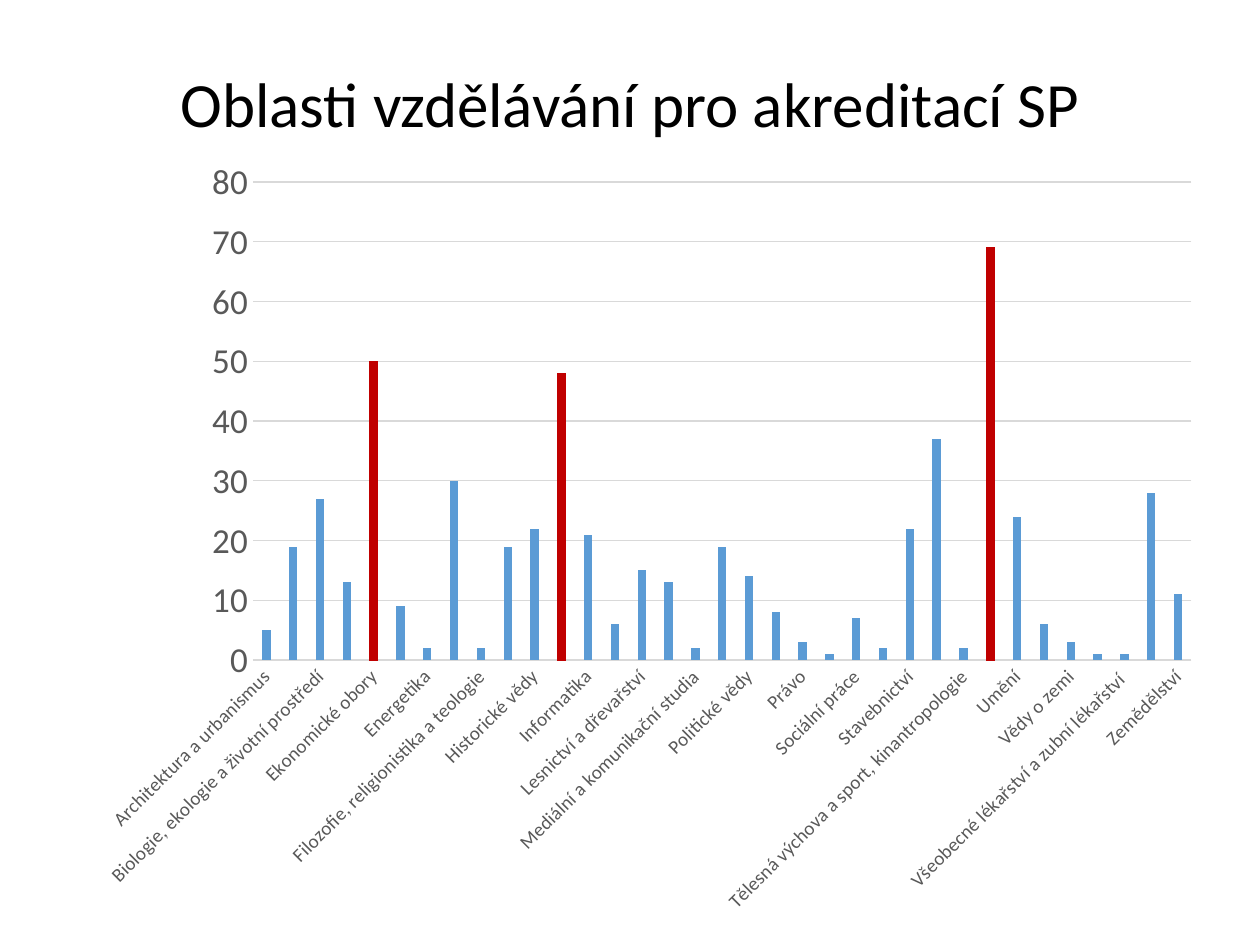
import pptx
import pptx.chart.data
import pptx.dml.color
import pptx.enum.chart
import pptx.enum.text
import pptx.oxml
import pptx.oxml.ns
import pptx.util
from pptx.util import Cm

AREAS = {
    "Architektura a urbanismus": 5,
    "Bezpečnostní obory": 19,
    "Biologie, ekologie a životní prostředí": 27,
    "Doprava": 13,
    "Ekonomické obory": 50,
    "Elektrotechnika": 9,
    "Energetika": 2,
    "Filologie": 30,
    "Filozofie, religionistika a teologie": 2,
    "Fyzika": 19,
    "Historické vědy": 22,
    "Chemie": 48,
    "Informatika": 21,
    "Kybernetika": 6,
    "Lesnictví a dřevařství": 15,
    "Matematika": 13,
    "Mediální a komunikační studia": 2,
    "Neučitelská pedagogika": 19,
    "Politické vědy": 14,
    "Potravinářství": 8,
    "Právo": 3,
    "Psychologie": 1,
    "Sociální práce": 7,
    "Sociologie": 2,
    "Stavebnictví": 22,
    "Strojírenství, technologie a materiály": 37,
    "Tělesná výchova a sport, kinantropologie": 2,
    "Učitelství": 69,
    "Umění": 24,
    "Vědy o umění a kultuře": 6,
    "Vědy o zemi": 3,
    "Vědy o Zemi (habilit. a jmen. řízení)": 1,
    "Všeobecné lékařství a zubní lékařství ": 1,
    "Zdravotnické obory": 28,
    "Zemědělství": 11,
}
HIGHLIGHT_FROM = 40


def rgb(value):
    """Return the colour for a hex string."""
    return pptx.dml.color.RGBColor.from_string(value)


def set_attrs(obj, values):
    """Set each named attribute of an object."""
    for name, value in values.items():
        setattr(obj, name, value)


def set_font(font, size, color):
    """Give a font its face, size and colour."""
    set_attrs(font, {"name": "Calibri", "size": pptx.util.Pt(size)})
    font.color.rgb = rgb(color)


def set_line(line, color, width=0.75):
    """Give a line its colour and width."""
    line.color.rgb = rgb(color)
    line.width = pptx.util.Pt(width)


def set_fill(fill, color):
    """Give a fill one solid colour."""
    fill.solid()
    fill.fore_color.rgb = rgb(color)


def add_title(s, left, top, width, height):
    """Add the centred slide title in the given box."""
    tf = s.shapes.add_textbox(left, top, width, height).text_frame
    set_attrs(tf, {
        "word_wrap": True,
        "vertical_anchor": pptx.enum.text.MSO_ANCHOR.MIDDLE,
        "margin_bottom": Cm(1.54),
    })
    p = tf.paragraphs[0]
    set_attrs(p, {"alignment": pptx.enum.text.PP_ALIGN.CENTER, "line_spacing": 0.9})
    r = p.add_run()
    r.text = "Oblasti vzdělávání pro akreditací SP"
    set_font(r.font, 36, "000000")


def set_plot_layout(chart, **fractions):
    """Fix the inner plot area as fractions of the chart."""
    area = chart.plots[0]._element.getparent()
    for old in area.findall(pptx.oxml.ns.qn("c:layout")):
        area.remove(old)
    modes = '<c:layoutTarget val="inner"/><c:xMode val="edge"/><c:yMode val="edge"/>'
    values = "".join(f'<c:{k} val="{v}"/>' for k, v in fractions.items())
    area.insert(0, pptx.oxml.parse_xml(
        f'<c:layout {pptx.oxml.ns.nsdecls("c")}><c:manualLayout>'
        f"{modes}{values}</c:manualLayout></c:layout>"))


def format_axes(chart):
    """Style the category and value axes."""
    marks = pptx.enum.chart.XL_TICK_MARK
    for axis, size in ((chart.category_axis, 11), (chart.value_axis, 20)):
        set_attrs(axis, {"major_tick_mark": marks.NONE, "minor_tick_mark": marks.NONE})
        set_font(axis.tick_labels.font, size, "595959")
    cat, val = chart.category_axis, chart.value_axis
    set_line(cat.format.line, "D9D9D9")
    cat._element.txPr.find(pptx.oxml.ns.qn("a:bodyPr")).set("rot", "-2700000")
    set_attrs(val, {"minimum_scale": 0, "maximum_scale": 80, "major_unit": 10})
    val.format.line.fill.background()
    set_line(val.major_gridlines.format.line, "D9D9D9")


def add_area_chart(s, left, top, width, height):
    """Add the column chart of education areas in the given box."""
    data = pptx.chart.data.CategoryChartData()
    data.categories = list(AREAS)
    data.add_series("Series 1", list(AREAS.values()))
    kind = pptx.enum.chart.XL_CHART_TYPE.COLUMN_CLUSTERED
    chart = s.shapes.add_chart(kind, left, top, width, height, data).chart
    set_attrs(chart, {"has_legend": False, "has_title": False})
    set_font(chart.font, 10, "000000")
    plot = chart.plots[0]
    set_attrs(plot, {"gap_width": 219, "overlap": -27, "vary_by_categories": False})
    series = plot.series[0]
    series.invert_if_negative = False
    set_fill(series.format.fill, "5B9BD5")
    for i, count in enumerate(AREAS.values()):
        if count > HIGHLIGHT_FROM:
            bar = series.points[i].format
            set_fill(bar.fill, "C00000")
            set_line(bar.line, "C00000", 0)
    format_axes(chart)
    set_plot_layout(chart, x=Cm(3.35) / width, y=Cm(0.75) / height,
                    w=Cm(18.92) / width, h=Cm(9.64) / height)


def main():
    """Build and save the slide."""
    prs = pptx.Presentation()
    set_attrs(prs, {"slide_width": Cm(25.4), "slide_height": Cm(19.05)})
    s = prs.slides.add_slide(prs.slide_layouts[6])
    add_title(s, Cm(1.75), Cm(1.02), Cm(21.9), Cm(3.68))
    add_area_chart(s, Cm(1.75), Cm(2.92), Cm(22.8), Cm(15.8))
    prs.save("out.pptx")


if __name__ == "__main__":
    main()
